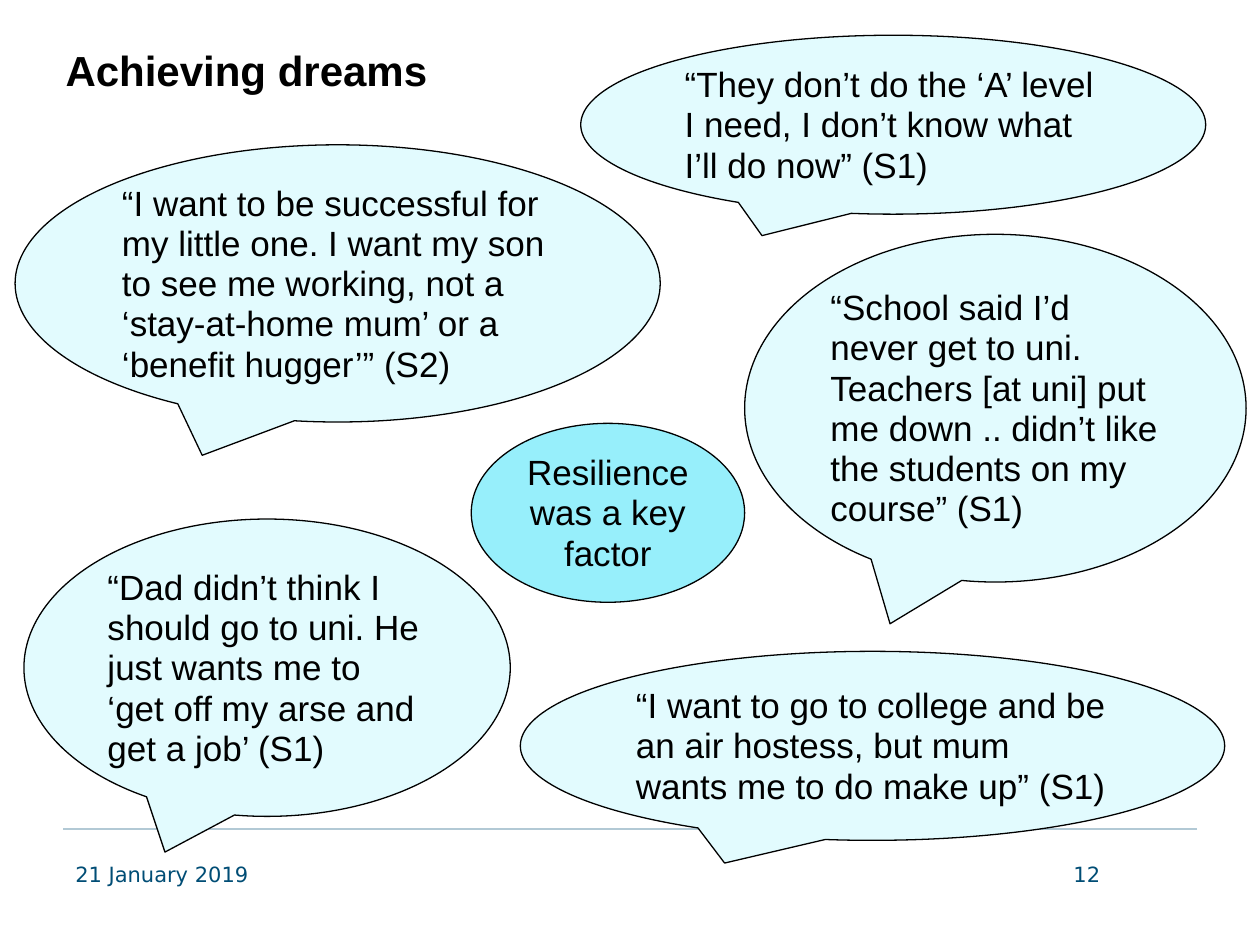
import pptx
import pptx.dml.color
import pptx.enum.shapes
import pptx.enum.text
import pptx.oxml.ns
import pptx.util

Inches = pptx.util.Inches
Pt = pptx.util.Pt
SHAPE = pptx.enum.shapes.MSO_SHAPE
ALIGN = pptx.enum.text.PP_ALIGN
ANCHOR = pptx.enum.text.MSO_ANCHOR

COLOURS = {
    "ink": "000000",
    "bubble": "E2FBFE",
    "key": "97EFFB",
    "rule": "B2C9D5",
    "footer": "004D75",
}
TITLE_FONT = {"name": "Arial", "size": Pt(24), "bold": True}
QUOTE_FONT = {"name": "Arial", "size": Pt(20)}
FOOTER_FONT = {"name": "DejaVu Sans", "size": Pt(12)}

# Quote, (left, top, width, height)
QUOTES = [
    ("“I want to be successful for my little one. I want my son to see me "
     "working, not a ‘stay-at-home mum’ or a ‘benefit hugger’” (S2)",
     (0.12, 1.15, 5.12, 2.2)),
    ("“They don’t do the ‘A’ level I need, I don’t know what I’ll do now” (S1)",
     (4.61, 0.28, 4.96, 1.42)),
    ("“School said I’d never get to uni. Teachers [at uni] put me down .. "
     "didn’t like the students on my course” (S1)",
     (5.91, 1.86, 3.98, 2.76)),
    ("“Dad didn’t think I should go to uni. He just wants me to "
     "‘get off my arse and get a job’ (S1)",
     (0.19, 4.12, 3.86, 2.36)),
    ("“I want to go to college and be an air hostess, but mum wants me to "
     "do make up” (S1)",
     (4.13, 5.17, 5.59, 1.5)),
]


def colour(name):
    return pptx.dml.color.RGBColor.from_string(COLOURS[name])


def inches(values):
    return [Inches(value) for value in values]


def write(shape, text, font, ink="ink", align=ALIGN.LEFT, anchor=ANCHOR.MIDDLE,
          spacing=None):
    frame = shape.text_frame
    frame.word_wrap = True
    frame.vertical_anchor = anchor
    para = frame.paragraphs[0]
    para.alignment = align
    para.line_spacing = spacing
    span = para.add_run()
    span.text = text
    for key, value in font.items():
        setattr(span.font, key, value)
    span.font.color.rgb = colour(ink)


def add_title(page, text):
    title = page.shapes.title
    title.left, title.top, title.width, title.height = inches(
        (0.42, 0.28, 9.08, 0.55))
    write(title, text, TITLE_FONT)


def add_rule(page):
    rule = page.shapes.add_connector(
        pptx.enum.shapes.MSO_CONNECTOR.STRAIGHT, *inches((9.5, 6.58, 0.5, 6.58)))
    rule.line.color.rgb = colour("rule")
    rule.line.width = Pt(1.25)
    properties = rule.element.spPr
    properties.append(properties.makeelement(
        pptx.oxml.ns.qn("a:effectLst"), {}))


def add_footer(page, text, left, align):
    box = page.shapes.add_textbox(*inches((left, 6.79, 2.33, 0.52)))
    write(box, text, FOOTER_FONT, "footer", align, ANCHOR.TOP)


def add_bubble(page, kind, text, place, fill, align):
    bubble = page.shapes.add_shape(kind, *inches(place))
    bubble.shadow.inherit = False
    bubble.fill.solid()
    bubble.fill.fore_color.rgb = colour(fill)
    bubble.line.color.rgb = colour("ink")
    bubble.line.width = Pt(0.75)
    # Centred and slightly tight lines stay clear of the curved outline
    write(bubble, text, QUOTE_FONT, align=align, spacing=Pt(23))
    return bubble


def main():
    deck = pptx.Presentation()
    deck.slide_width, deck.slide_height = Inches(10), Inches(7.5)
    page = deck.slides.add_slide(deck.slide_layouts[5])

    # Rule, title and footer
    add_rule(page)
    add_title(page, "Achieving dreams")
    add_footer(page, "21 January 2019", 0.5, ALIGN.LEFT)
    add_footer(page, "12", 6.5, ALIGN.RIGHT)

    # Quotes, each with a tail to the lower left
    for text, place in QUOTES:
        bubble = add_bubble(page, SHAPE.OVAL_CALLOUT, text, place, "bubble",
                            ALIGN.LEFT)
        bubble.adjustments[0] = -0.21
        bubble.adjustments[1] = 0.62

    # Key message
    add_bubble(page, SHAPE.OVAL, "Resilience was a key factor",
               (3.74, 3.36, 2.17, 1.42), "key", ALIGN.CENTER)

    deck.save("out.pptx")


if __name__ == "__main__":
    main()
